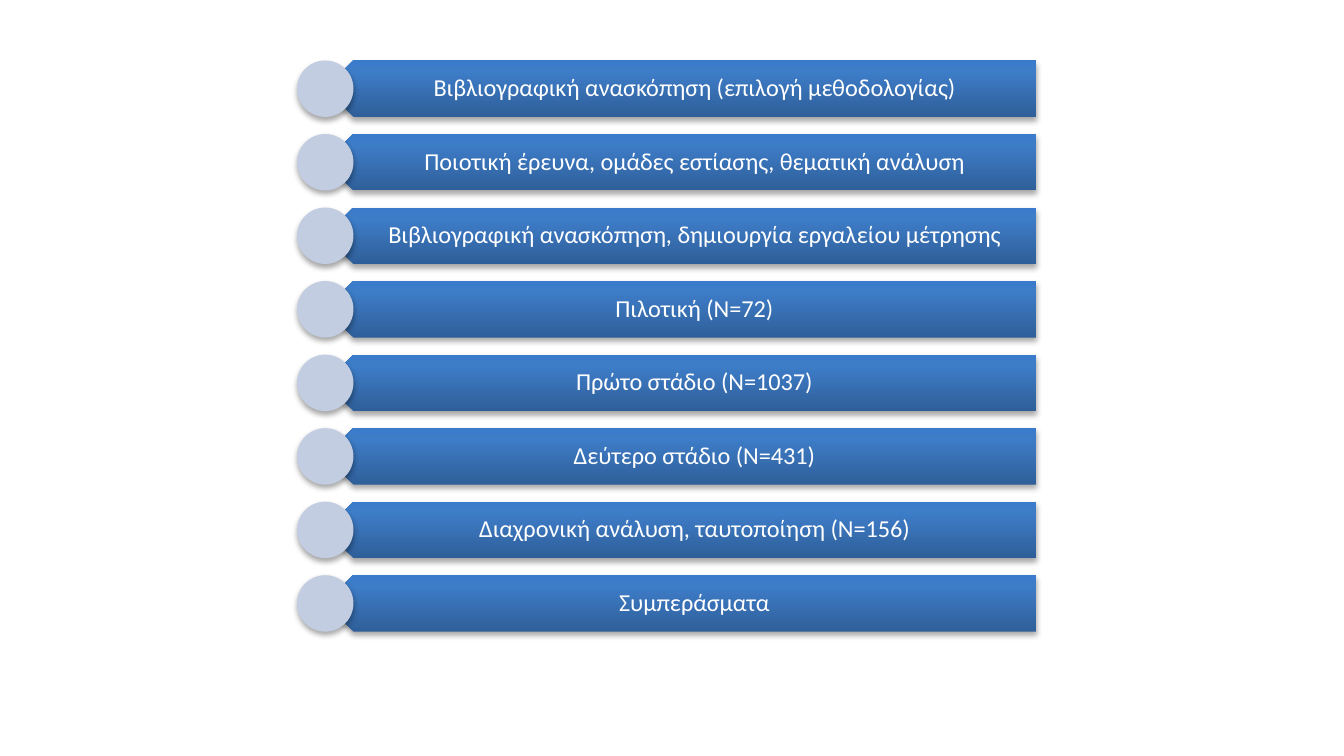
from pptx import Presentation
from pptx.dml.color import RGBColor
from pptx.enum.shapes import MSO_SHAPE
from pptx.enum.text import MSO_ANCHOR, PP_ALIGN
from pptx.oxml import parse_xml
from pptx.oxml.ns import nsdecls, qn
from pptx.util import Inches, Pt

COLOURS = {
    "bar_dark": "2F5F99",
    "bar_middle": "3D7CC7",
    "bar_light": "3A7CCB",
    "disc": "C2CDE1",
    "text": "FFFFFF",
    "shadow": "000000",
}
BAR_STOPS = [(0, "bar_dark"), (80, "bar_middle"), (100, "bar_light")]
FONT = "Calibri"

STEPS = [
    "Βιβλιογραφική ανασκόπηση (επιλογή μεθοδολογίας)",
    "Ποιοτική έρευνα, ομάδες εστίασης, θεματική ανάλυση",
    "Βιβλιογραφική ανασκόπηση, δημιουργία εργαλείου μέτρησης",
    "Πιλοτική (Ν=72)",
    "Πρώτο στάδιο (Ν=1037)",
    "Δεύτερο στάδιο (Ν=431)",
    "Διαχρονική ανάλυση, ταυτοποίηση (Ν=156)",
    "Συμπεράσματα",
]


def add_shadow(shape):
    """Soft shadow straight below the shape."""
    shape.shadow.inherit = False
    effects = shape.element.spPr.find(qn("a:effectLst"))
    effects.append(parse_xml(
        f'<a:outerShdw {nsdecls("a")} blurRad="{Pt(3.1)}" dist="{Pt(1.8)}" '
        f'dir="5400000" rotWithShape="0"><a:srgbClr val="{COLOURS["shadow"]}">'
        '<a:alpha val="35000"/></a:srgbClr></a:outerShdw>'))


def fill_gradient(shape, stops):
    """Vertical gradient that stays upright when the shape is turned."""
    shape.fill.background()
    empty_fill = shape.element.spPr.find(qn("a:noFill"))
    stop_xml = "".join(
        f'<a:gs pos="{position * 1000}"><a:srgbClr val="{COLOURS[name]}"/></a:gs>'
        for position, name in stops)
    gradient = parse_xml(
        f'<a:gradFill {nsdecls("a")} rotWithShape="0"><a:gsLst>{stop_xml}</a:gsLst>'
        '<a:lin ang="16200000" scaled="0"/></a:gradFill>')
    shape.element.spPr.replace(empty_fill, gradient)


def add_plain_shape(group, kind, left, top, width, height):
    """Shape without an outline, with the common shadow."""
    shape = group.shapes.add_shape(
        kind, Inches(left), Inches(top), Inches(width), Inches(height))
    shape.line.fill.background()
    add_shadow(shape)
    return shape


def add_label(group, text, left, top, width, height, size=13, colour="text"):
    box = group.shapes.add_textbox(
        Inches(left), Inches(top), Inches(width), Inches(height))
    frame = box.text_frame
    frame.word_wrap = True
    frame.vertical_anchor = MSO_ANCHOR.MIDDLE
    frame.margin_left, frame.margin_right = Inches(0.19), Inches(0.1)
    frame.margin_top = frame.margin_bottom = Inches(0.05)
    para = frame.paragraphs[0]
    para.alignment = PP_ALIGN.CENTER
    para.line_spacing = 0.9
    span = para.add_run()
    span.text = text
    span.font.name = FONT
    span.font.size = Pt(size)
    span.font.color.rgb = RGBColor.from_string(COLOURS[colour])


def add_step(group, text, left, top, width, height):
    """One row: a bar pointing left, its label, and a disc over the point."""
    half = height / 2
    bar = add_plain_shape(
        group, MSO_SHAPE.PENTAGON, left + half, top, width - half, height)
    bar.rotation = 180
    fill_gradient(bar, BAR_STOPS)

    label_left = 0.32
    add_label(group, text, left + label_left, top, width - label_left, height)

    disc = add_plain_shape(group, MSO_SHAPE.OVAL, left, top, height, height)
    disc.fill.solid()
    disc.fill.fore_color.rgb = RGBColor.from_string(COLOURS["disc"])


def add_step_list(page, steps, left, top, width, height, row_height=0.42):
    """Rows spread evenly from the top to the bottom of the box."""
    group = page.shapes.add_group_shape()
    pitch = (height - row_height) / (len(steps) - 1)
    for row, text in enumerate(steps):
        add_step(group, text, left, top + row * pitch, width, row_height)


def main():
    deck = Presentation()
    # Widescreen page, 16:9
    deck.slide_width = Inches(10)
    deck.slide_height = deck.slide_width * 9 // 16
    page = deck.slides.add_slide(deck.slide_layouts[6])
    add_step_list(page, STEPS, left=2.21, top=0.45, width=5.5, height=4.25)
    deck.save("out.pptx")


if __name__ == "__main__":
    main()
